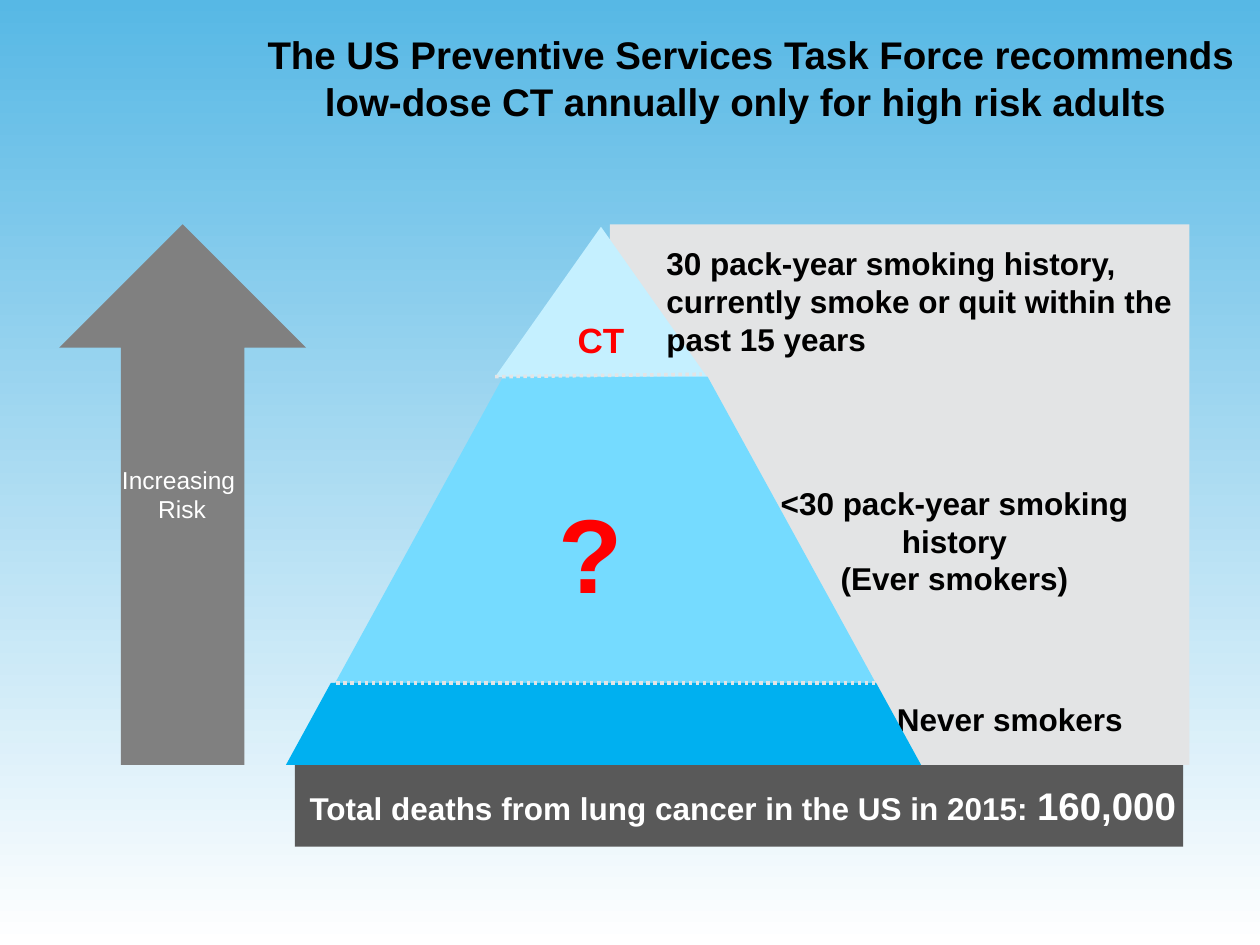
from lxml import etree
from pptx import Presentation, util as u
from pptx.dml.color import RGBColor
from pptx.enum import dml, shapes, text
from pptx.oxml.ns import qn

COLORS = {
    "sky": "57B8E5", "white": "FFFFFF", "black": "000000", "red": "FF0000",
    "panel": "E3E4E5", "arrow": "808080", "footer": "595959",
    "high": "C5F0FF", "medium": "75DBFF", "low": "00B0F0",
}


def rgb(name):
    return RGBColor.from_string(COLORS[name])


class SlideBuilder:
    """Holds the shared style and the slide being filled."""
    font = "Arial"

    def __init__(self, slide):
        self.slide = slide

    def background(self, top, bottom):
        fill = self.slide.background.fill
        fill.gradient()
        fill.gradient_angle = 270
        for stop, name, position in zip(fill.gradient_stops, (top, bottom), (0, 1)):
            stop.color.rgb = rgb(name)
            stop.position = position

    def shape(self, kind, box, color, adjustment=None):
        shape = self.slide.shapes.add_shape(kind, *map(u.Inches, box))
        shape.shadow.inherit = False
        shape.fill.solid()
        shape.fill.fore_color.rgb = rgb(color)
        shape.line.fill.background()
        if adjustment is not None:
            shape.adjustments[0] = adjustment
        return shape

    def style_run(self, run, size, color, bold=True):
        run.font.name = self.font
        run.font.size = u.Pt(size)
        run.font.bold = bold
        run.font.color.rgb = rgb(color)

    def label(self, shape, words, size, color, bold=True, align=text.PP_ALIGN.CENTER):
        frame = shape.text_frame
        frame.word_wrap = True
        frame.text = words
        for paragraph in frame.paragraphs:
            paragraph.alignment = align
            for run in paragraph.runs:
                self.style_run(run, size, color, bold)
        return frame

    def textbox(self, box, words, size=18, color="black", **style):
        shape = self.slide.shapes.add_textbox(*map(u.Inches, box))
        return self.label(shape, words, size, color, **style)

    def dotted_line(self, start, end):
        points = map(u.Inches, (*start, *end))
        line = self.slide.shapes.add_connector(shapes.MSO_CONNECTOR.STRAIGHT, *points)
        line.line.color.rgb = rgb("panel")
        line.line.width = u.Pt(2)
        line.line.dash_style = dml.MSO_LINE.ROUND_DOT
        etree.SubElement(line._element.spPr, qn("a:effectLst"))


def main():
    presentation = Presentation()
    presentation.slide_width = u.Inches(10)
    presentation.slide_height = u.Inches(7.5)
    slide = presentation.slides.add_slide(presentation.slide_layouts[6])
    builder = SlideBuilder(slide)
    kinds = shapes.MSO_SHAPE
    top, high_end, medium_end, base = 1.78, 2.99, 5.42, 6.07

    builder.background("sky", "white")
    builder.shape(kinds.RECTANGLE, (2.34, base, 7.05, 0.65), "footer")
    builder.shape(kinds.RECTANGLE, (4.84, top, 4.6, base - top), "panel")
    tip = builder.shape(kinds.ISOSCELES_TRIANGLE, (3.93, 1.8, 1.68, 1.19), "high")
    builder.label(tip, "CT", 20, "red")

    builder.shape(kinds.UP_ARROW, (0.47, top, 1.96, base - top), "arrow")
    builder.textbox((0.35, 3.64, 2.19, 0.57), "Increasing \nRisk", 14, "white", bold=False)

    total = builder.textbox((2.35, 6.16, 7.09, 0.47),
                            "Total deaths from lung cancer in the US in 2015: ", color="white")
    total.margin_left = total.margin_right = u.Inches(0.05)
    deaths = total.paragraphs[0].add_run()
    deaths.text = "160,000"
    builder.style_run(deaths, 22, "white")

    builder.textbox((6.95, 5.51, 2.13, 0.37), "Never smokers")
    builder.textbox((5.89, 3.79, 3.37, 0.91),
                    "<30 pack-year smoking history\n(Ever smokers)")
    builder.textbox((5.19, 1.89, 4.61, 1.01),
                    "30 pack-year smoking history, currently smoke or quit within "
                    "the past 15 years", align=text.PP_ALIGN.LEFT)

    middle = builder.shape(kinds.TRAPEZOID, (2.66, high_end, 4.29, medium_end - high_end),
                           "medium", 0.549)
    question = builder.label(middle, "? ", 60, "red")
    question.margin_top, question.margin_bottom = u.Inches(0), u.Inches(0.16)
    builder.shape(kinds.TRAPEZOID, (2.27, medium_end, 5.04, base - medium_end), "low", 0.548)

    builder.dotted_line((3.93, high_end), (5.57, 2.97))
    builder.dotted_line((2.67, medium_end), (6.96, medium_end))
    builder.textbox((1.99, 0.2, 7.94, 0.84),
                    "The US Preventive Services Task Force recommends low-dose CT "
                    "annually only for high risk adults ", 22)
    presentation.save("out.pptx")


if __name__ == "__main__":
    main()
